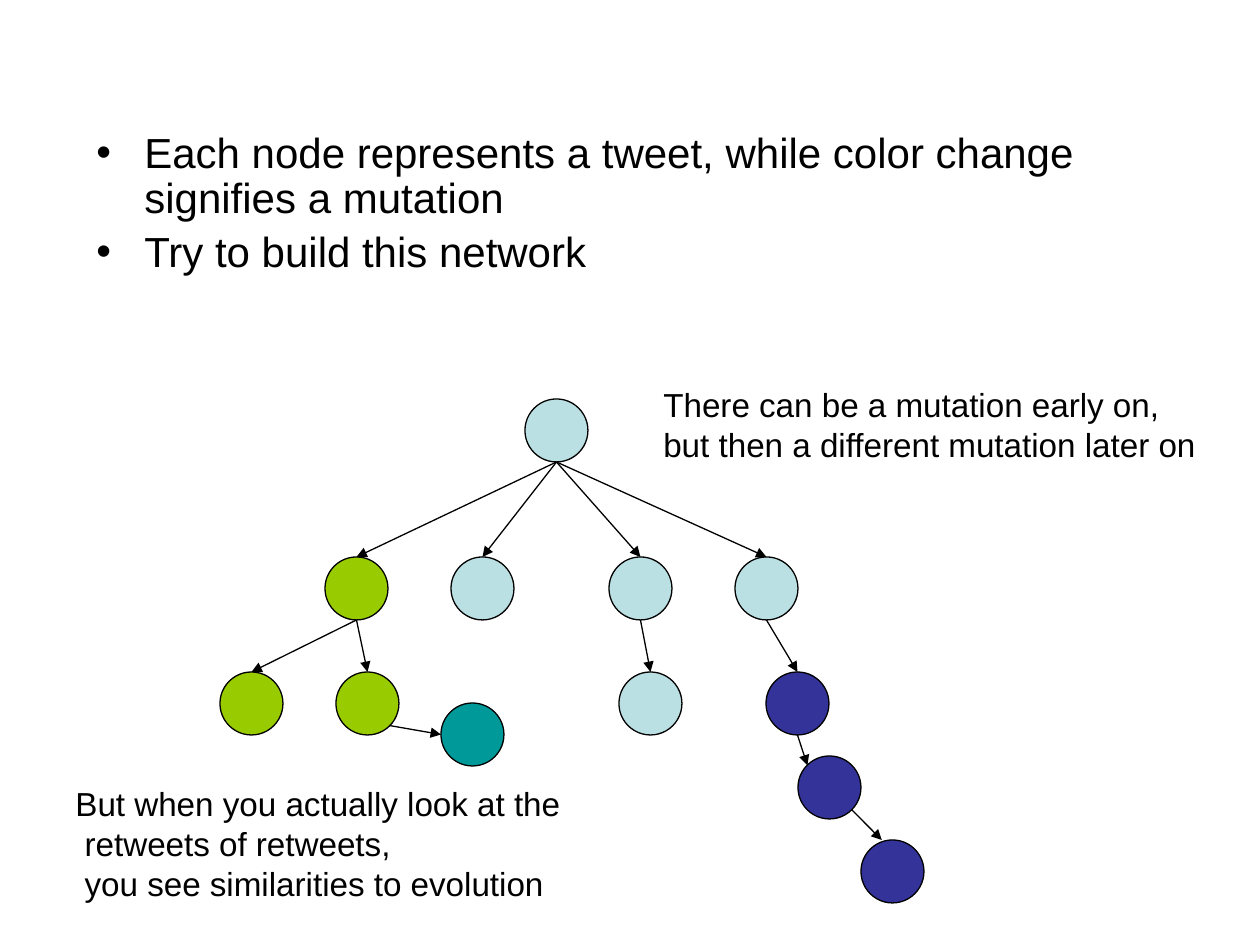
from dataclasses import dataclass

from lxml.etree import SubElement
from pptx import Presentation
from pptx.dml.color import RGBColor
from pptx.enum.shapes import MSO_CONNECTOR, MSO_SHAPE
from pptx.oxml.ns import qn
from pptx.util import Emu, Pt

PX_PER_INCH = 126
NODE_SIZE = 63

# Points on a node, as fractions of its size
ANCHORS = {
    "top": (0.5, 0),
    "top_third": (0.33, 0),
    "top_left": (0.15, 0.15),
    "left": (0, 0.5),
    "bottom": (0.5, 1),
    "bottom_right": (0.85, 0.85),
}


@dataclass(frozen=True)
class Theme:
    font: str = "Arial"
    ink: str = "000000"
    original: str = "BBE0E3"
    early_mutation: str = "99CC00"
    late_mutation: str = "333399"
    second_mutation: str = "009999"
    body_size: int = 24
    note_size: int = 19
    line_width: float = 0.75


def px(length):
    return Emu(round(length * 914400 / PX_PER_INCH))


class SlideBuilder:
    def __init__(self, slide, theme):
        self.slide = slide
        self.theme = theme

    def text(self, left, top, width, height, lines, size, wrap):
        box = self.slide.shapes.add_textbox(px(left), px(top), px(width), px(height))
        text_frame = box.text_frame
        text_frame.word_wrap = wrap
        text_frame.text = "\n".join(lines)
        for paragraph in text_frame.paragraphs:
            font = paragraph.runs[0].font
            font.name = self.theme.font
            font.size = Pt(size)
            font.color.rgb = RGBColor.from_string(self.theme.ink)
        return text_frame

    def bullets(self, left, top, width, height, lines):
        size = self.theme.body_size
        text_frame = self.text(left, top, width, height, lines, size, True)
        for paragraph in text_frame.paragraphs:
            paragraph.line_spacing = 0.9
            paragraph.space_before = Pt(0.2 * size)
            properties = paragraph._p.get_or_add_pPr()
            properties.set("marL", str(px(48)))
            properties.set("indent", str(px(-48)))
            SubElement(properties, qn("a:buFont"), typeface=self.theme.font)
            SubElement(properties, qn("a:buChar"), char="•")

    def node(self, left, top, color):
        shape = self.slide.shapes.add_shape(
            MSO_SHAPE.OVAL, px(left), px(top), px(NODE_SIZE), px(NODE_SIZE))
        shape.shadow.inherit = False
        shape.fill.solid()
        shape.fill.fore_color.rgb = RGBColor.from_string(color)
        self.outline(shape.line)

    def arrow(self, start, end):
        connector = self.slide.shapes.add_connector(
            MSO_CONNECTOR.STRAIGHT, *map(px, start), *map(px, end))
        self.outline(connector.line)
        SubElement(connector.line._get_or_add_ln(), qn("a:tailEnd"), type="triangle")
        SubElement(connector._element.spPr, qn("a:effectLst"))

    def outline(self, line):
        line.color.rgb = RGBColor.from_string(self.theme.ink)
        line.width = Pt(self.theme.line_width)


def anchor_point(node, anchor):
    left, top, _ = node
    across, down = ANCHORS[anchor]
    return left + across * NODE_SIZE, top + down * NODE_SIZE


def main():
    theme = Theme()
    presentation = Presentation()
    presentation.slide_width = px(1260)
    presentation.slide_height = px(945)
    slide = presentation.slides.add_slide(presentation.slide_layouts[6])
    builder = SlideBuilder(slide, theme)

    builder.bullets(84, 126, 1071, 158, [
        "Each node represents a tweet, while color change signifies a mutation",
        "Try to build this network",
    ])

    tweet_row, retweet_row = 557, 672
    nodes = {
        "root": (525, 399, theme.original),
        "tweet 1": (325, tweet_row, theme.early_mutation),
        "tweet 2": (451, tweet_row, theme.original),
        "tweet 3": (609, tweet_row, theme.original),
        "tweet 4": (735, tweet_row, theme.original),
        "retweet 1a": (220, retweet_row, theme.early_mutation),
        "retweet 1b": (336, retweet_row, theme.early_mutation),
        "retweet 3": (619, retweet_row, theme.original),
        "retweet 4": (766, retweet_row, theme.late_mutation),
        "second mutation": (441, 703, theme.second_mutation),
        "late 1": (798, 756, theme.late_mutation),
        "late 2": (861, 840, theme.late_mutation),
    }
    edges = [("root", "bottom", f"tweet {number}", "top") for number in range(1, 5)]
    edges += [
        ("tweet 1", "bottom", "retweet 1a", "top"),
        ("tweet 1", "bottom", "retweet 1b", "top"),
        ("tweet 3", "bottom", "retweet 3", "top"),
        ("tweet 4", "bottom", "retweet 4", "top"),
        ("retweet 1b", "bottom_right", "second mutation", "left"),
        ("retweet 4", "bottom", "late 1", "top_left"),
        ("late 1", "bottom_right", "late 2", "top_third"),
    ]
    for node in nodes.values():
        builder.node(*node)
    for parent, start, child, end in edges:
        builder.arrow(anchor_point(nodes[parent], start), anchor_point(nodes[child], end))

    builder.text(651, 378, 568, 92, [
        "There can be a mutation early on,",
        "but then a different mutation later on",
    ], theme.note_size, False)
    builder.text(63, 777, 512, 132, [
        "But when you actually look at the",
        " retweets of retweets,",
        " you see similarities to evolution",
    ], theme.note_size, False)

    presentation.save("out.pptx")


if __name__ == "__main__":
    main()
